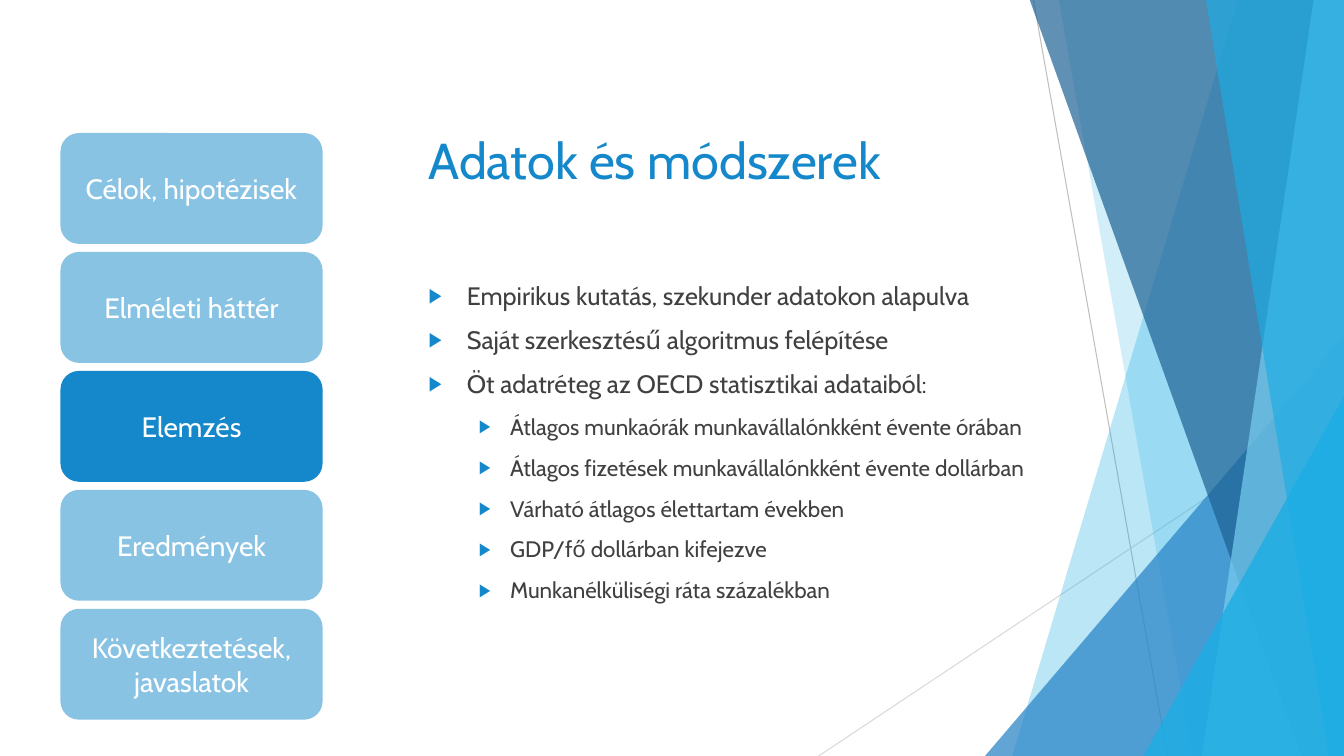
from lxml.etree import SubElement
from pptx import Presentation
from pptx.dml.color import RGBColor
from pptx.enum.shapes import MSO_CONNECTOR, MSO_SHAPE
from pptx.enum.text import MSO_ANCHOR, MSO_AUTO_SIZE, PP_ALIGN
from pptx.oxml.ns import qn
from pptx.util import Pt

PX = 9144
WIDE, HIGH = 1333, 750
MAIN = "1488CA"
SKY = "1CADE4"


def color(code):
    return RGBColor.from_string(code)


class Deck:
    """Holds the slide and its style, and draws each kind of element."""

    font = "Cabin"

    def __init__(self):
        self.show = Presentation()
        self.show.slide_width = WIDE * PX
        self.show.slide_height = HIGH * PX
        self.slide = self.show.slides.add_slide(self.show.slide_layouts[1])
        self.shapes = self.slide.shapes

    def paint(self, shape, code, alpha=100):
        shape.shadow.inherit = False
        shape.fill.solid()
        shape.fill.fore_color.rgb = color(code)
        shape.line.fill.background()
        if alpha < 100:
            tint = shape.fill._xPr.find(qn("a:solidFill"))[0]
            SubElement(tint, qn("a:alpha"), val=str(alpha * 1000))

    def style(self, para, size, code, align=PP_ALIGN.LEFT):
        para.alignment = align
        for run in para.runs:
            run.font.name = self.font
            run.font.size = Pt(size)
            run.font.color.rgb = color(code)

    def line(self, start, end, code):
        ends = [n * PX for n in start + end]
        wire = self.shapes.add_connector(MSO_CONNECTOR.STRAIGHT, *ends)
        wire.line.color.rgb = color(code)
        wire.line.width = Pt(0.75)
        SubElement(wire._element.spPr, qn("a:effectLst"))

    def band(self, top, low, code, alpha):
        pen = self.shapes.build_freeform(top, -1, scale=PX)
        pen.add_line_segments([(WIDE, -1), (WIDE, HIGH), (low, HIGH)], close=True)
        self.paint(pen.convert_to_shape(), code, alpha)

    def wedge(self, left, top, code, alpha):
        box = [n * PX for n in (left, top, WIDE - left, HIGH - top)]
        shape = self.shapes.add_shape(MSO_SHAPE.ISOSCELES_TRIANGLE, *box)
        shape.adjustments[0] = 1
        self.paint(shape, code, alpha)

    def step(self, text, box, alpha):
        shape = self.shapes.add_shape(MSO_SHAPE.ROUNDED_RECTANGLE, *[n * PX for n in box])
        self.paint(shape, MAIN, alpha)
        frame = shape.text_frame
        frame.text = text
        frame.word_wrap = True
        frame.vertical_anchor = MSO_ANCHOR.MIDDLE
        self.style(frame.paragraphs[0], 20, "FFFFFF", PP_ALIGN.CENTER)

    def place(self, holder, box):
        holder.left, holder.top, holder.width, holder.height = [n * PX for n in box]
        self.shapes._spTree.append(holder._element)
        frame = holder.text_frame
        frame.word_wrap = True
        frame.auto_size = MSO_AUTO_SIZE.NONE
        frame.vertical_anchor = MSO_ANCHOR.TOP
        return frame

    def title(self, text, box):
        frame = self.place(self.shapes.title, box)
        frame.text = text
        self.style(frame.paragraphs[0], 36, MAIN)

    def bullet(self, para, left, hang):
        props = para._p.get_or_add_pPr()
        props.set("marL", str(left * PX))
        props.set("indent", str(-hang * PX))
        tint = SubElement(props, qn("a:buClr"))
        SubElement(tint, qn("a:srgbClr"), val=MAIN)
        SubElement(props, qn("a:buSzPct"), val="80000")
        SubElement(props, qn("a:buFont"), typeface="Arial")
        SubElement(props, qn("a:buChar"), char="▶")

    def list(self, items, box):
        frame = self.place(self.slide.placeholders[1], box)
        frame.text = "\n".join(text for level, text in items)
        for para, (level, text) in zip(frame.paragraphs, items):
            para.level = level
            para.space_before = Pt(10)
            self.style(para, (18, 16)[level], "404040")
            self.bullet(para, *((38, 38), (81, 31))[level])


def main():
    deck = Deck()
    deck.line((1025, 0), (1158, HIGH), "BFBFBF")
    deck.line((WIDE, 403), (812, HIGH), "D9D9D9")
    deck.band(1228, 1004, SKY, 30)
    deck.band(1050, 1183, SKY, 20)
    deck.wedge(977, 333, "2683C6", 72)
    deck.band(1021, 1291, "1D6294", 70)
    deck.band(1303, 1192, "77CEEF", 70)
    deck.band(1196, 1318, SKY, 65)
    deck.wedge(1134, 393, SKY, 80)

    deck.title("Adatok és módszerek", (415, 123, 583, 175))
    deck.list([
        (0, "Empirikus kutatás, szekunder adatokon alapulva"),
        (0, "Saját szerkesztésű algoritmus felépítése"),
        (0, "Öt adatréteg az OECD statisztikai adataiból:"),
        (1, "Átlagos munkaórák munkavállalónkként évente órában"),
        (1, "Átlagos fizetések munkavállalónkként évente dollárban"),
        (1, "Várható átlagos élettartam években"),
        (1, "GDP/fő dollárban kifejezve"),
        (1, "Munkanélküliségi ráta százalékban"),
    ], (415, 273, 669, 391))

    steps = ["Célok, hipotézisek", "Elméleti háttér", "Elemzés",
             "Eredmények", "Következtetések, javaslatok"]
    for i, text in enumerate(steps):
        alpha = 100 if text == "Elemzés" else 50
        deck.step(text, (60, 132 + i * 118, 260, 110), alpha)

    deck.show.save("out.pptx")


if __name__ == "__main__":
    main()
